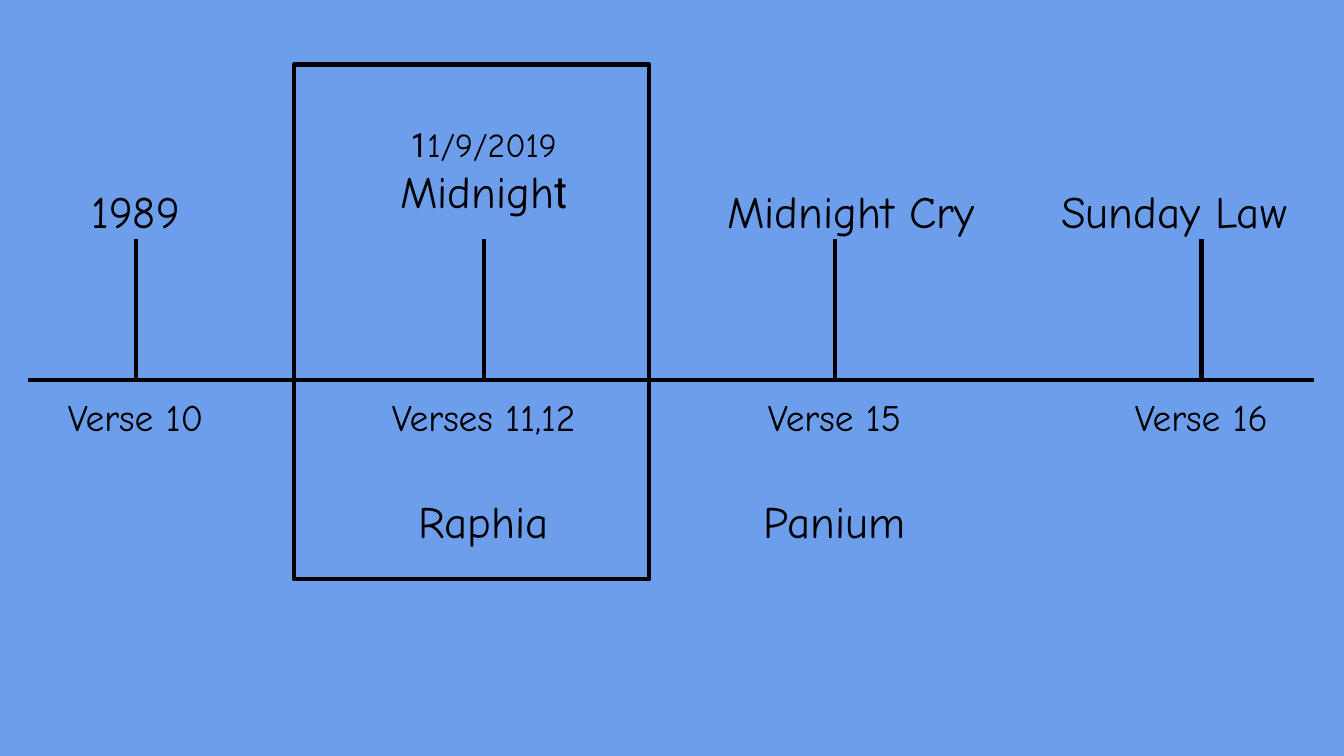
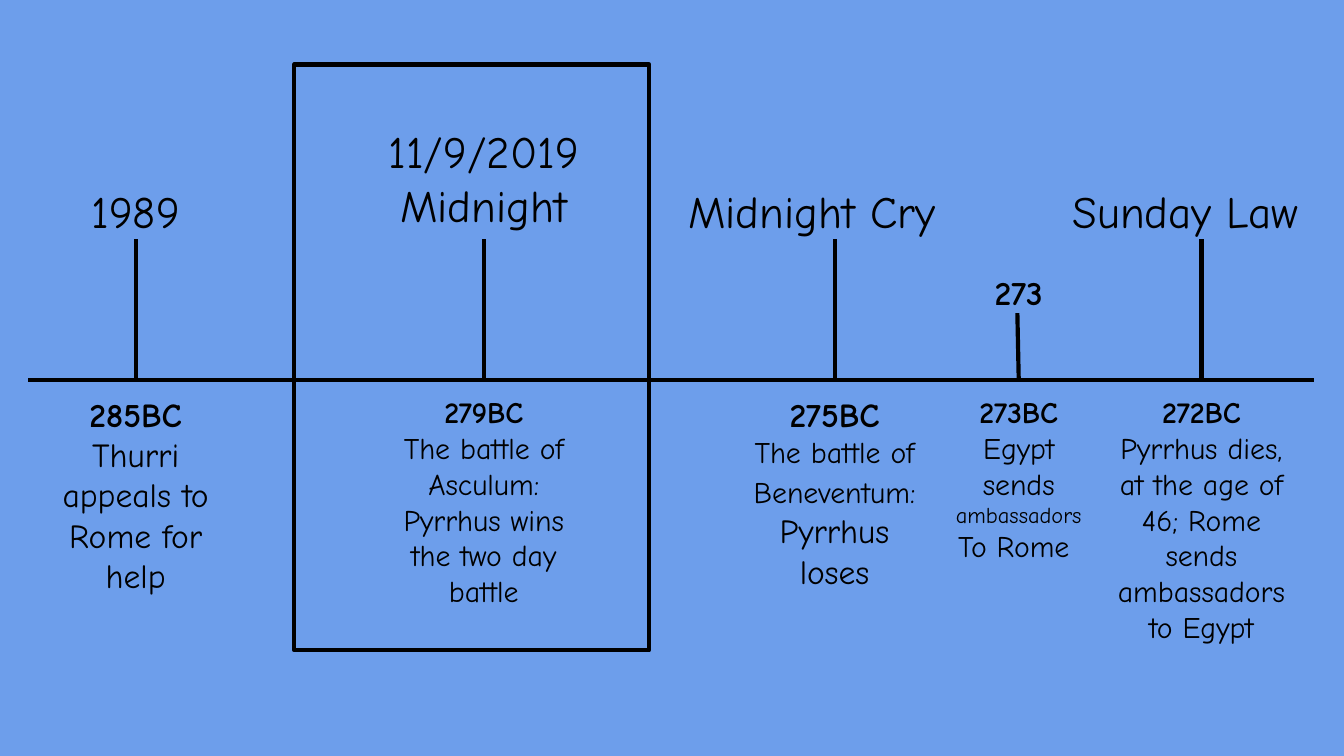
from pptx import Presentation
from pptx.dml.color import RGBColor
from pptx.enum.shapes import MSO_CONNECTOR, MSO_SHAPE
from pptx.enum.text import MSO_ANCHOR, PP_ALIGN
from pptx.oxml.ns import qn
from pptx.util import Inches, Pt
from lxml.etree import SubElement

INK, SKY = "000000", "6D9EEB"
FONT, ALT = "Comic Neue", "Roboto Condensed"
STOPS = FIRST, NIGHT, CRY, LAW = 0.8, 3.39, 6, 8.73
EGYPT = 7.37
LEFT, WIDE, BASE = 0.21, 9.57, 2.83
AXIS = (LEFT, 1.78, WIDE, 1.05)
HEADS = (LEFT, 1.27, WIDE, 0.51)
NIGHTS = (LEFT, 0.82, WIDE, 0.95)


def paint(hue):
    """Turn a hex string into a colour."""
    return RGBColor.from_string(hue)


def pen(line):
    """Give a line the shared ink and weight."""
    line.color.rgb = paint(INK)
    line.width = Pt(2.25)


def rule(slide, x1, y1, x2, y2):
    """Draw a straight line without a shadow."""
    ends = [Inches(n) for n in (x1, y1, x2, y2)]
    bar = slide.shapes.add_connector(MSO_CONNECTOR.STRAIGHT, *ends)
    pen(bar.line)
    SubElement(bar._element.spPr, qn("a:effectLst"))


def axis(slide, box):
    """Draw the base line and a tick at each stop."""
    left, top, wide, high = box
    foot = top + high
    rule(slide, left, foot, left + wide, foot)
    for stop in STOPS:
        rule(slide, left + stop, top, left + stop, foot)


def frame(slide, box):
    """Draw the hollow frame around the Midnight stop."""
    rect = slide.shapes.add_shape(MSO_SHAPE.RECTANGLE, *map(Inches, box))
    rect.shadow.inherit = False
    rect.fill.background()
    pen(rect.line)
    SubElement(rect.line._ln, qn("a:round"))


def label(slide, box, paras):
    """Write centred paragraphs of (text, size, bold, font) runs."""
    body = slide.shapes.add_textbox(*map(Inches, box)).text_frame
    body.word_wrap = True
    body.vertical_anchor = MSO_ANCHOR.TOP
    body.margin_left = body.margin_right = Inches(0.1)
    body.margin_top = body.margin_bottom = Inches(0.1)
    for i, runs in enumerate(paras):
        para = body.add_paragraph() if i else body.paragraphs[0]
        para.alignment = PP_ALIGN.CENTER
        for words, size, bold, face in runs:
            part = para.add_run()
            part.text = words
            part.font.size = Pt(size)
            part.font.bold = bold
            part.font.name = face
            part.font.color.rgb = paint(INK)


def row(slide, box, items):
    """Centre labels on offsets from the left of a band."""
    left, top, _, high = box
    for mid, wide, paras in items:
        label(slide, (left + mid - wide / 2, top, wide, high), paras)


def run(words, size=24, bold=False, face=FONT):
    """Describe one run of text."""
    return words, size, bold, face


def event(year, size, *lines):
    """Describe a bold year above its lines of runs."""
    return [[run(year, size, True)], *lines]


def verses(slide):
    """Build the timeline of verses."""
    axis(slide, AXIS)
    notes = [(FIRST, 1.56, "Verse 10"), (NIGHT, 1.97, "Verses 11,12"),
             (CRY, 1.56, "Verse 15"), (LAW, 1.56, "Verse 16")]
    row(slide, (LEFT, BASE, WIDE, 0.41),
        [(mid, wide, [[run(words, 20)]]) for mid, wide, words in notes])
    row(slide, HEADS, [
        (FIRST, 1.56, [[run("1989")]]),
        (8.58, 2.28, [[run("Sunday Law ")]]),
    ])
    row(slide, NIGHTS, [(NIGHT, 1.56, [
        [run("1", 18, face=ALT), run("1/9/2019", 18)],
        [run("Midnigh"), run("t", face=ALT)],
    ])])
    row(slide, HEADS, [(6.12, 2.65, [[run("Midnight Cry")]])])
    row(slide, (LEFT, 3.57, WIDE, 0.41), [
        (NIGHT, 1.56, [[run("Raphia")]]),
        (CRY, 1.56, [[run("Panium")]]),
    ])
    frame(slide, (2.19, 0.48, 2.64, 3.83))


def wars(slide):
    """Build the timeline of Pyrrhus."""
    axis(slide, AXIS)
    row(slide, (LEFT, BASE, WIDE, 2.06), [
        (FIRST, 1.56, event(
            "285BC", 18, [run("Thurri appeals to Rome for help", 18)])),
        (NIGHT, 1.56, event("279BC", 16, [run(
            "The battle of Asculum: Pyrrhus wins the two day battle", 16)])),
        (CRY, 1.56, event("275BC", 18, [
            run("The battle of Beneventum:", 16), run(" Pyrrhus loses", 18)])),
    ])
    row(slide, (LEFT, BASE, WIDE, 2.67), [
        (LAW, 1.56, event("272BC", 16, [run(
            "Pyrrhus dies, at the age of 46; "
            "Rome sends ambassadors to Egypt", 16)])),
    ])
    row(slide, HEADS, [
        (FIRST, 1.56, [[run("1989")]]),
        (5.83, 2.22, [[run("Midnight Cry")]]),
        (8.61, 2.22, [[run("Sunday Law")]]),
    ])
    rule(slide, 7.57, 2.33, 7.58, BASE)
    row(slide, (LEFT, 1.92, WIDE, 0.41),
        [(EGYPT, 0.98, [[run("273", 18, True)]])])
    row(slide, (LEFT, BASE, WIDE, 2.06), [
        (EGYPT, 1.25, event(
            "273BC", 16,
            [run("Egypt sends ", 16), run("ambassadors", 12)],
            [run("To Rome ", 16)])),
    ])
    row(slide, NIGHTS, [
        (NIGHT, 1.97, [[run("11/9/2019")], [run("Midnight")]])])
    frame(slide, (2.19, 0.48, 2.64, 4.36))


def main():
    """Build and save the deck."""
    deck = Presentation()
    deck.slide_width = Inches(10)
    deck.slide_height = deck.slide_width * 9 // 16
    back = deck.slide_master.background.fill
    back.solid()
    back.fore_color.rgb = paint(SKY)
    for build in (verses, wars):
        build(deck.slides.add_slide(deck.slide_layouts[6]))
    deck.save("out.pptx")


if __name__ == "__main__":
    main()
